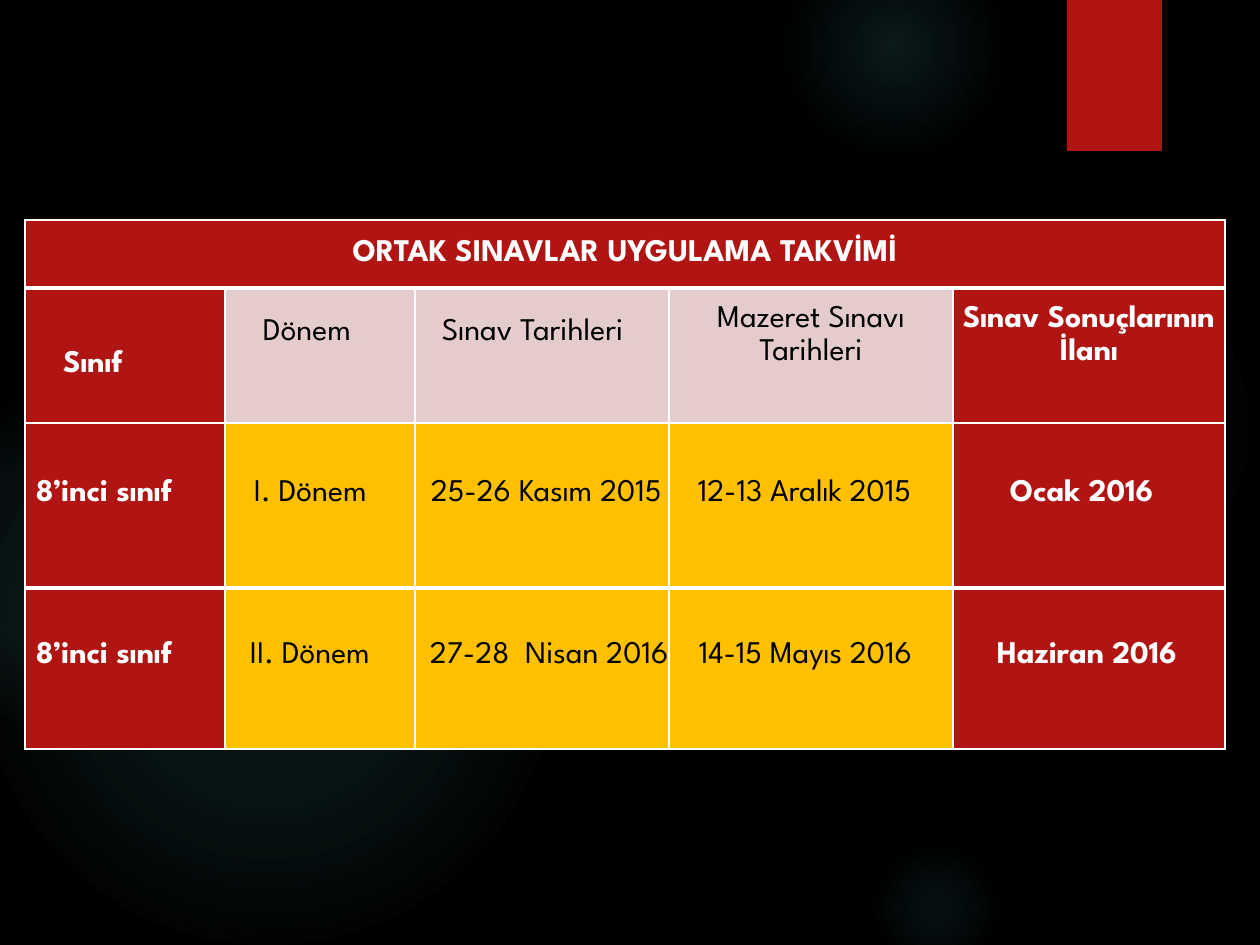
from typing import NamedTuple

from lxml import etree
from pptx import Presentation
from pptx.dml.color import RGBColor
from pptx.enum.shapes import MSO_SHAPE
from pptx.enum.text import PP_ALIGN
from pptx.oxml import parse_xml
from pptx.oxml.ns import nsdecls, qn
from pptx.util import Pt

ELLIPSE, RECTANGLE = MSO_SHAPE.OVAL, MSO_SHAPE.RECTANGLE
LEFT, CENTER = PP_ALIGN.LEFT, PP_ALIGN.CENTER

BLACK = RGBColor(0x00, 0x00, 0x00)
WHITE = RGBColor(0xFF, 0xFF, 0xFF)
RED = RGBColor(0xB0, 0x15, 0x13)
PINK = RGBColor(0xE4, 0xCC, 0xCC)
YELLOW = RGBColor(0xFF, 0xC0, 0x00)
TEAL = RGBColor(0x50, 0xB9, 0xC1)

FONT = "League Spartan"
EMU_PER_PX = 914400 / 126
COLUMN_WIDTHS = [200, 190, 254, 284, 272]
ROW_HEIGHTS = [68, 135, 165, 161]
THIN, THICK = 1, 3
THICK_RULES = {1, 3}


class Glow(NamedTuple):
    left: int
    top: int
    size: int
    stops: list[tuple[int, int]]


class Entry(NamedTuple):
    lines: list[str]
    top: int
    left: int = 0
    align: PP_ALIGN = LEFT


GLOWS = [
    Glow(868, 231, 388, [(0, 7), (36, 6), (69, 0)]),
    Glow(784, -63, 220, [(0, 14), (36, 7), (73, 0)]),
    Glow(868, 840, 136, [(0, 9), (36, 5), (66, 0)]),
    Glow(-21, 368, 577, [(0, 11), (36, 10), (75, 0)]),
    Glow(-116, 399, 325, [(0, 8), (36, 8), (72, 0)]),
]

ENTRIES = [
    [Entry(["ORTAK SINAVLAR UYGULAMA TAKVİMİ"], 15, 0, CENTER)],
    [
        Entry(["Sınıf"], 58, 38),
        Entry(["Dönem"], 26, 38),
        Entry(["Sınav Tarihleri"], 26, 27),
        Entry(["Mazeret Sınavı", "Tarihleri"], 13, 0, CENTER),
        Entry(["Sınav Sonuçlarının", "İlanı"], 13, 0, CENTER),
    ],
    [
        Entry(["8’inci sınıf"], 52, 11),
        Entry(["I. Dönem"], 52, 29),
        Entry(["25-26 Kasım 2015"], 52, 16),
        Entry(["12-13 Aralık 2015"], 52, 29),
        Entry(["Ocak 2016"], 52, 57),
    ],
    [
        Entry(["8’inci sınıf"], 49, 11),
        Entry(["II. Dönem"], 49, 25),
        Entry(["27-28  Nisan 2016"], 49, 15),
        Entry(["14-15 Mayıs 2016"], 49, 30),
        Entry(["Haziran 2016"], 49, 44),
    ],
]


def px(length: int) -> int:
    return round(length * EMU_PER_PX)


def add_plain_shape(slide, kind, left: int, top: int, width: int, height: int):
    shape = slide.shapes.add_shape(kind, px(left), px(top), px(width), px(height))
    shape.shadow.inherit = False
    shape.line.fill.background()
    return shape


def add_glow(slide, glow: Glow) -> None:
    shape = add_plain_shape(slide, ELLIPSE, glow.left, glow.top, glow.size, glow.size)
    shape.fill.background()
    stops = "".join(
        f'<a:gs pos="{position * 1000}"><a:srgbClr val="{TEAL}">'
        f'<a:alpha val="{opacity * 1000}"/></a:srgbClr></a:gs>'
        for position, opacity in glow.stops
    )
    gradient = parse_xml(
        f'<a:gradFill {nsdecls("a")}><a:gsLst>{stops}</a:gsLst><a:path path="circle">'
        '<a:fillToRect l="50000" t="50000" r="50000" b="50000"/></a:path></a:gradFill>'
    )
    properties = shape._element.spPr
    properties.replace(properties.find(qn("a:noFill")), gradient)


def set_borders(cell, top: int, bottom: int) -> None:
    properties = cell._tc.get_or_add_tcPr()
    for side, width in (("L", THIN), ("R", THIN), ("T", top), ("B", bottom)):
        line = etree.SubElement(properties, qn(f"a:ln{side}"), w=str(Pt(width)))
        fill = etree.SubElement(line, qn("a:solidFill"))
        etree.SubElement(fill, qn("a:srgbClr"), val=str(WHITE))


def write_entry(cell, entry: Entry, color: RGBColor, bold: bool) -> None:
    cell.margin_top, cell.margin_left = px(entry.top), px(entry.left)
    frame = cell.text_frame
    frame.text = "\n".join(entry.lines)
    for paragraph in frame.paragraphs:
        paragraph.alignment = entry.align
        paragraph.line_spacing = 1.15
        paragraph.font.name = FONT
        paragraph.font.size = Pt(18)
        paragraph.font.bold = bold
        paragraph.font.color.rgb = color


def add_calendar(slide, left: int, top: int) -> None:
    frame = slide.shapes.add_table(
        len(ROW_HEIGHTS), len(COLUMN_WIDTHS), px(left), px(top),
        px(sum(COLUMN_WIDTHS)), px(sum(ROW_HEIGHTS)),
    )
    table = frame.table
    table.first_row = table.horz_banding = False
    for column, width in zip(table.columns, COLUMN_WIDTHS):
        column.width = px(width)
    last_column = len(COLUMN_WIDTHS) - 1
    for row_index, height in enumerate(ROW_HEIGHTS):
        table.rows[row_index].height = px(height)
        top_rule = THICK if row_index in THICK_RULES else THIN
        bottom_rule = THICK if row_index + 1 in THICK_RULES else THIN
        for column_index in range(len(COLUMN_WIDTHS)):
            cell = table.cell(row_index, column_index)
            cell.margin_left = cell.margin_right = 0
            cell.margin_top = cell.margin_bottom = 0
            set_borders(cell, top_rule, bottom_rule)
            heading = row_index == 0 or column_index in (0, last_column)
            cell.fill.solid()
            cell.fill.fore_color.rgb = RED if heading else PINK if row_index == 1 else YELLOW
            if column_index < len(ENTRIES[row_index]):
                entry = ENTRIES[row_index][column_index]
                write_entry(cell, entry, WHITE if heading else BLACK, heading)
    table.cell(0, 0).merge(table.cell(0, last_column))


def main() -> None:
    presentation = Presentation()
    presentation.slide_width, presentation.slide_height = px(1260), px(945)
    slide = presentation.slides.add_slide(presentation.slide_layouts[6])
    slide.background.fill.solid()
    slide.background.fill.fore_color.rgb = BLACK
    for glow in GLOWS:
        add_glow(slide, glow)
    ribbon = add_plain_shape(slide, RECTANGLE, 1067, 0, 95, 151)
    ribbon.fill.solid()
    ribbon.fill.fore_color.rgb = RED
    add_calendar(slide, 25, 220)
    presentation.save("out.pptx")


if __name__ == "__main__":
    main()
